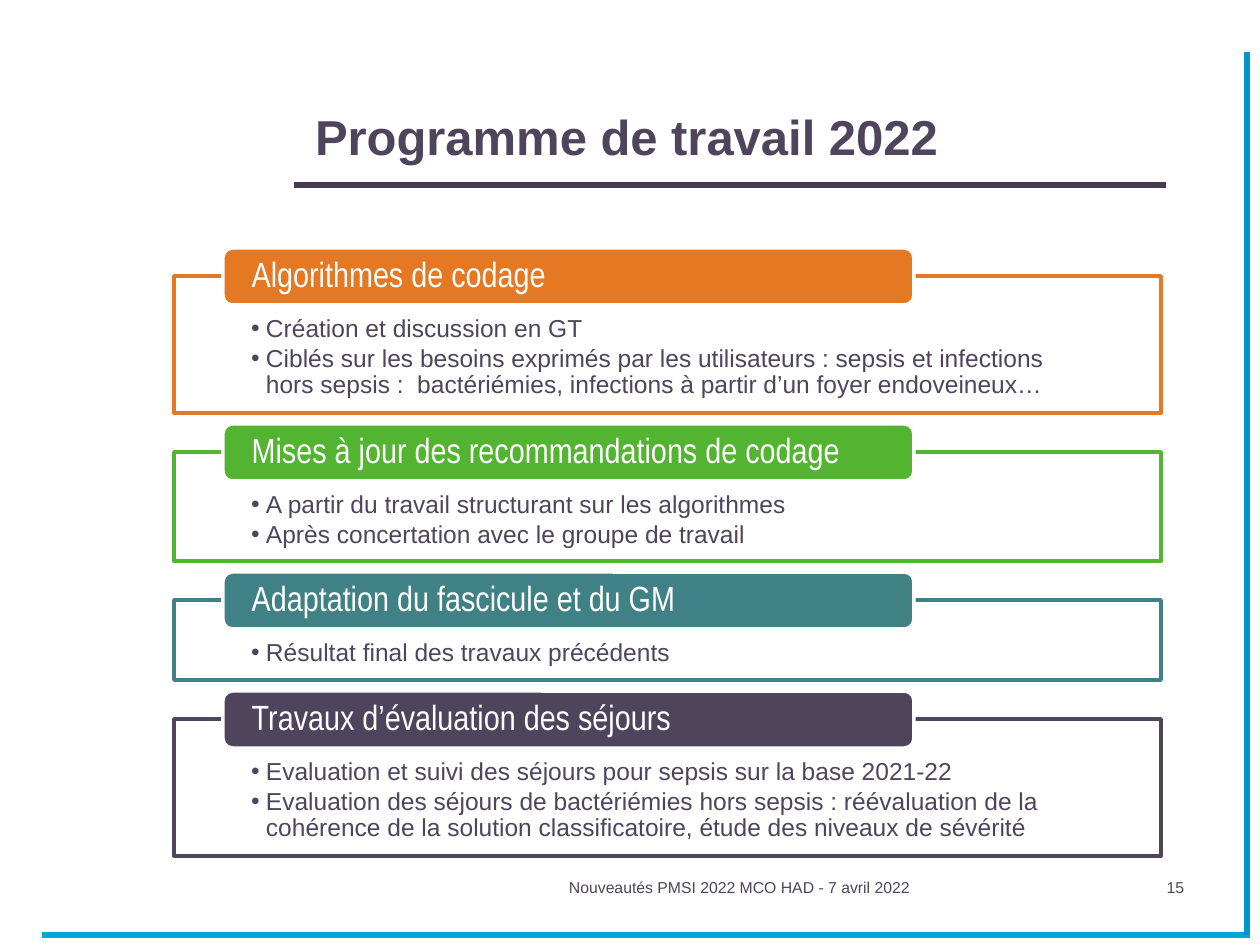
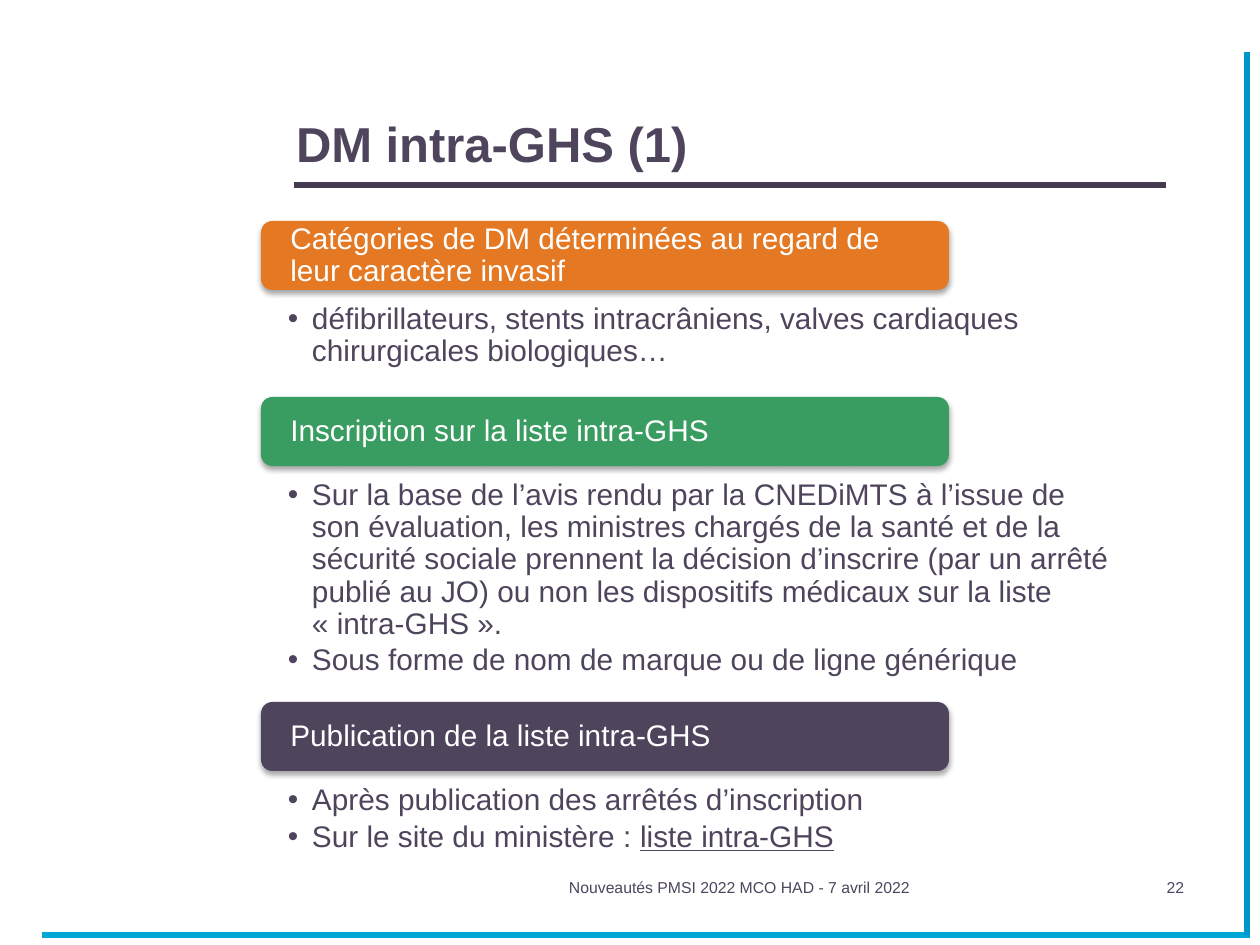
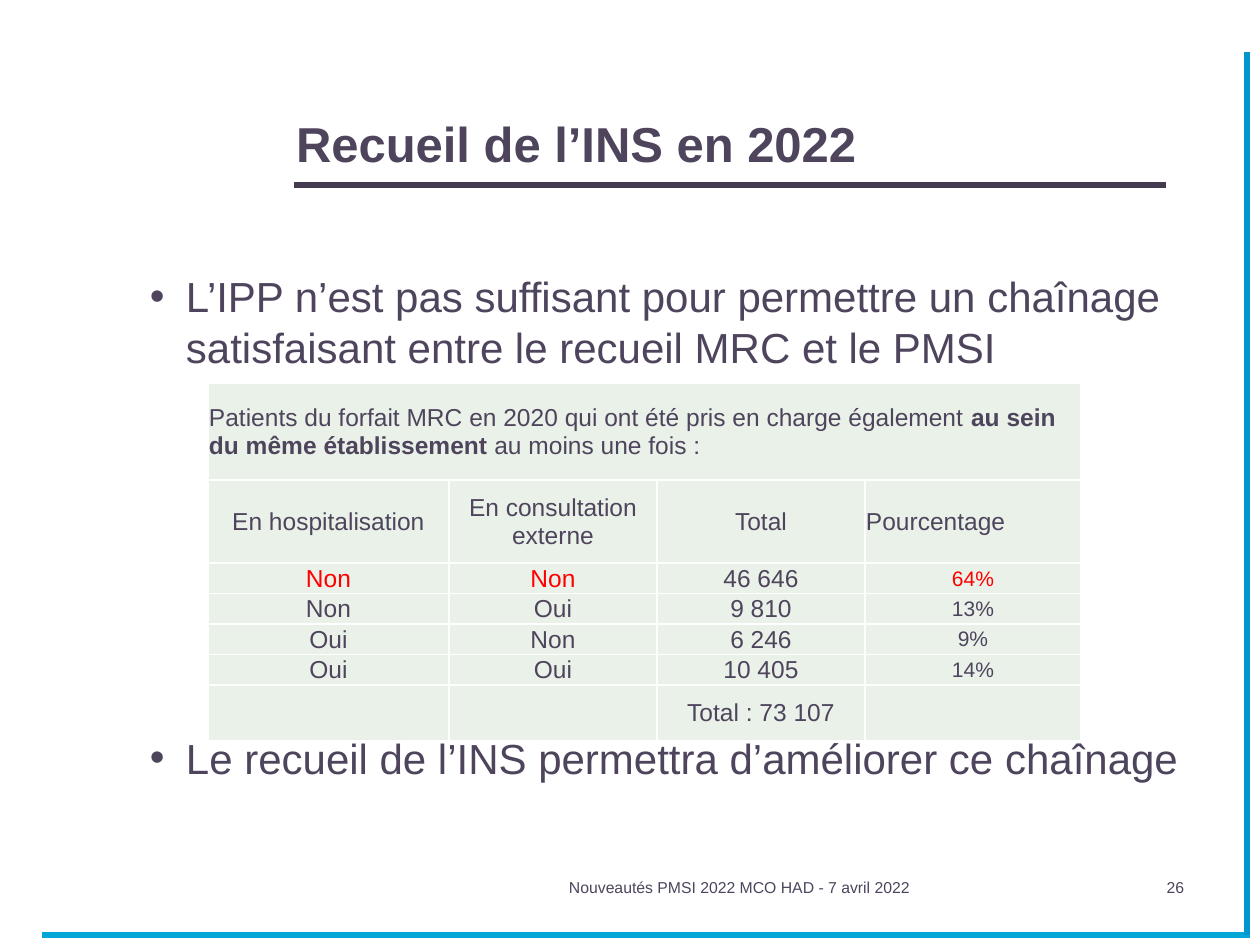
from lxml import etree
from pptx import Presentation
from pptx import util as u
from pptx.dml.color import RGBColor
from pptx.enum import shapes, text
from pptx.oxml import ns

PX = 914400 / 126
NBSP = chr(160)
INK, WHITE, RULE, FRAME = "4E455D", "FFFFFF", "453B50", "0095CB"
ORANGE, GREEN, TEAL, JADE = "E47823", "52B431", "3F8185", "399C61"
CELL, RED = "E9F1E8", "FF0000"
LEFT, CENTER, RIGHT, JUSTIFY = (text.PP_ALIGN.LEFT, text.PP_ALIGN.CENTER,
                                text.PP_ALIGN.RIGHT, text.PP_ALIGN.JUSTIFY)
TOP, MIDDLE, BOTTOM = (text.MSO_ANCHOR.TOP, text.MSO_ANCHOR.MIDDLE,
                       text.MSO_ANCHOR.BOTTOM)
FOOTER = "Nouveautés PMSI 2022 MCO HAD - 7 avril 2022"


def px(*lengths):
    return [u.Emu(round(n * PX)) for n in lengths]


def rgb(code):
    return RGBColor.from_string(code)


def sub(parent, tag, **attributes):
    """Append a DrawingML child element."""
    child = etree.SubElement(parent, ns.qn(tag))
    for key, value in attributes.items():
        child.set(key, str(value))
    return child


def write(frame, paragraphs, size=14, color=INK, font="Arial", bold=False,
          align=LEFT, anchor=TOP, inset=(13, 6, 13, 6), spacing=1, after=0,
          before=0, bullet=None):
    """Fill a text frame or cell; bullet is (left margin, hanging), and a
    paragraph is a string or a list of (string, run format) pairs."""
    frame.margin_left, frame.margin_top, frame.margin_right, frame.margin_bottom = px(*inset)
    frame.vertical_anchor = anchor
    body = getattr(frame, "text_frame", frame)
    body.word_wrap = True
    for i, content in enumerate(paragraphs):
        paragraph = body.add_paragraph() if i else body.paragraphs[0]
        if bullet:
            margin, hanging = px(*bullet)
            properties = paragraph._p.get_or_add_pPr()
            properties.set("marL", str(margin))
            properties.set("indent", str(-hanging))
            sub(properties, "a:buFont", typeface="Arial")
            sub(properties, "a:buChar", char="•")
        paragraph.alignment = align
        paragraph.line_spacing = spacing
        paragraph.space_after = u.Pt(after)
        paragraph.space_before = u.Pt(before if i else 0)
        runs = [(content, {})] if isinstance(content, str) else content
        for words, extra in runs:
            run = paragraph.add_run()
            run.text = words
            run.font.name, run.font.size = font, u.Pt(size)
            run.font.color.rgb = rgb(color)
            run.font.bold = extra.get("bold", bold)
            run.font.underline = extra.get("underline")


class Deck:
    def __init__(self):
        self.prs = Presentation()
        self.prs.slide_width, self.prs.slide_height = px(1260, 945)
        self.slide = None

    def start(self, title, number, title_at=(283, 41)):
        """Add a slide with the shared rules, title and footer."""
        self.slide = self.prs.slides.add_slide(self.prs.slide_layouts[6])
        self.rule(294, 185, 1166, 185, RULE)
        self.rule(42, 935, 1250, 935, "02A7D5")
        self.rule(1247, 935, 1247, 52, FRAME)
        self.text((*title_at, 840, 137), [title], size=28, bold=True, anchor=BOTTOM)
        self.text((556, 872, 399, 63), [FOOTER], size=9)
        self.text((966, 872, 231, 55), [number], size=9, align=RIGHT)

    def rule(self, x1, y1, x2, y2, color):
        line = self.slide.shapes.add_connector(
            shapes.MSO_CONNECTOR.STRAIGHT, *px(x1, y1, x2, y2))
        line.line.color.rgb = rgb(color)
        line.line.width = u.Pt(3.06)
        sub(line._element.spPr, "a:effectLst")

    def text(self, box, paragraphs, **style):
        write(self.slide.shapes.add_textbox(*px(*box)).text_frame, paragraphs, **style)

    def panel(self, preset, box, paragraphs, fill, outline=None, shadow=False, **style):
        shape = self.slide.shapes.add_shape(preset, *px(*box))
        shape.shadow.inherit = False
        shape.fill.solid()
        shape.fill.fore_color.rgb = rgb(fill)
        if outline:
            shape.line.color.rgb = rgb(outline)
            shape.line.width = u.Pt(2)
        else:
            shape.line.fill.background()
        if shadow:
            effects = shape._element.spPr.find(ns.qn("a:effectLst"))
            outer = sub(effects, "a:outerShdw", blurRad=u.Pt(3.1), dist=u.Pt(1.8),
                        dir=5400000, rotWithShape=0)
            sub(sub(outer, "a:srgbClr", val="000000"), "a:alpha", val=35000)
        write(shape.text_frame, paragraphs, **style)

    def sections(self, items, left, top, width, gap, head, outlined, inset,
                 size, head_size, head_font, hanging):
        """Stack bodies, each with a header tab; head is (width, height, rise)."""
        head_width, head_height, rise = head
        for heading, color, height, points in items:
            self.panel(shapes.MSO_SHAPE.RECTANGLE, (left, top, width, height), points,
                       WHITE, color if outlined else None, size=size, inset=inset,
                       spacing=0.9, after=size * 0.15, bullet=(hanging, hanging))
            self.panel(shapes.MSO_SHAPE.ROUNDED_RECTANGLE,
                       (left + 49, top - rise, head_width, head_height), [heading],
                       color, WHITE if outlined else None, shadow=not outlined,
                       size=head_size, font=head_font, color=WHITE, anchor=MIDDLE,
                       inset=(26, 0, 26, 0), spacing=0.9)
            top += height + gap

    def table(self, left, top, widths, heights):
        grid = self.slide.shapes.add_table(
            len(heights), len(widths), *px(left, top, sum(widths), sum(heights))).table
        grid.first_row = grid.horz_banding = False
        for column, width in zip(grid.columns, px(*widths)):
            column.width = width
        for row, height in zip(grid.rows, px(*heights)):
            row.height = height
        for cell in grid.iter_cells():
            properties = cell._tc.get_or_add_tcPr()
            for side in ("a:lnL", "a:lnR", "a:lnT", "a:lnB"):
                border = sub(properties, side, w=u.Pt(1))
                sub(sub(border, "a:solidFill"), "a:srgbClr", val=WHITE)
            cell.fill.solid()
            cell.fill.fore_color.rgb = rgb(CELL)
        return grid


def work_programme(deck):
    deck.start("Programme de travail 2022", "15", title_at=(302, 34))
    deck.sections([
        ("Algorithmes de codage", ORANGE, 137, [
            "Création et discussion en GT",
            "Ciblés sur les besoins exprimés par les utilisateurs : sepsis et infections "
            "hors sepsis :  bactériémies, infections à partir d’un foyer endoveineux…"]),
        ("Mises à jour des recommandations de codage", GREEN, 109, [
            "A partir du travail structurant sur les algorithmes",
            "Après concertation avec le groupe de travail"]),
        ("Adaptation du fascicule et du GM", TEAL, 80, [
            "Résultat final des travaux précédents"]),
        ("Travaux d’évaluation des séjours", INK, 137, [
            "Evaluation et suivi des séjours pour sepsis sur la base 2021-22",
            "Evaluation des séjours de bactériémies hors sepsis : réévaluation de la "
            "cohérence de la solution classificatoire, étude des niveaux de sévérité"]),
    ], left=174, top=276, width=987, gap=39, head=(691, 57, 28), outlined=True,
        inset=(77, 40, 77, 14), size=14, head_size=20, head_font="Arial Narrow",
        hanging=15)


def device_list(deck):
    deck.start("DM intra-GHS (1)", "22")
    deck.sections([
        ("Catégories de DM déterminées au regard de leur caractère invasif", ORANGE, 128, [
            "défibrillateurs, stents intracrâniens, valves cardiaques "
            "chirurgicales biologiques…"]),
        ("Inscription sur la liste intra-GHS", JADE, 257, [
            "Sur la base de l’avis rendu par la CNEDiMTS à l’issue de son évaluation, les "
            "ministres chargés de la santé et de la sécurité sociale prennent la décision "
            "d’inscrire (par un arrêté publié au JO) ou non les dispositifs médicaux sur "
            f"la liste «{NBSP}intra-GHS{NBSP}».",
            "Sous forme de nom de marque ou de ligne générique"]),
        ("Publication de la liste intra-GHS", INK, 132, [
            "Après publication des arrêtés d’inscription",
            [("Sur le site du ministère : ", {}),
             ("liste intra-GHS", {"underline": True})]]),
    ], left=212, top=255, width=984, gap=48, head=(688, 69, 34), outlined=False,
        inset=(76, 49, 76, 16), size=17, head_size=17, head_font="Arial", hanging=24)


def identity_collection(deck):
    deck.start("Recueil de l’INS en 2022", "26")
    deck.text((111, 265, 1081, 655), [
        "L’IPP n’est pas suffisant pour permettre un chaînage satisfaisant entre le "
        "recueil MRC et le PMSI",
        "Le recueil de l’INS permettra d’améliorer ce chaînage",
    ], size=24, before=206, bullet=(62, 36))

    patients = deck.table(208, 383, (241, 208, 208, 216), (97, 83, 30, 30, 30, 30, 56))
    patients.cell(0, 0).merge(patients.cell(0, 3))
    cell_style = {"anchor": MIDDLE, "inset": (1, 1, 1, 0)}
    write(patients.cell(0, 0), [[
        ("Patients du forfait MRC en 2020 qui ont été pris en charge également ", {}),
        ("au sein du même établissement", {"bold": True}),
        (f" au moins une fois{NBSP}:", {})]], **cell_style)
    rows = [
        ("En hospitalisation", "En consultation externe", "Total", "Pourcentage"),
        ("Non", "Non", "46 646", "64%"),
        ("Non", "Oui", "9 810", "13%"),
        ("Oui", "Non", "6 246", "9%"),
        ("Oui", "Oui", "10 405", "14%"),
        ("", "", f"Total{NBSP}: 73 107", ""),
    ]
    for r, row in enumerate(rows, 1):
        for c, value in enumerate(row):
            if value:
                write(patients.cell(r, c), [value],
                      size=12 if value.endswith("%") else 14,
                      color=RED if r == 2 and c != 2 else INK,
                      align=JUSTIFY if value == "Pourcentage" else CENTER, **cell_style)


def main():
    deck = Deck()
    work_programme(deck)
    device_list(deck)
    identity_collection(deck)
    deck.prs.save("out.pptx")


if __name__ == "__main__":
    main()
